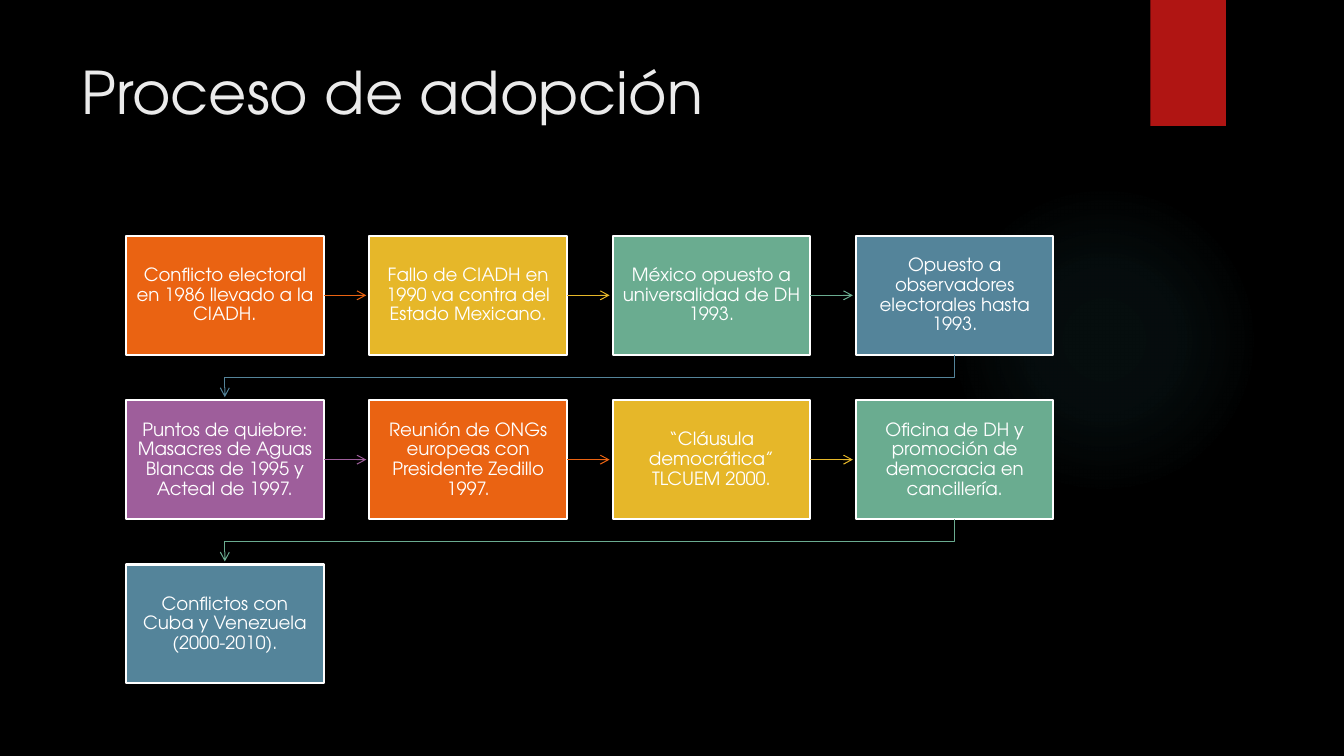
from dataclasses import dataclass
from itertools import pairwise

from lxml.etree import SubElement as Sub
from pptx import Presentation
from pptx.dml.color import RGBColor as Rgb
from pptx.enum.shapes import MSO_CONNECTOR as Link, MSO_SHAPE as Kind
from pptx.enum.text import MSO_ANCHOR as Anchor, PP_ALIGN as Align
from pptx.oxml import parse_xml
from pptx.oxml.ns import nsdecls, qn
from pptx.shapes.autoshape import Shape
from pptx.util import Inches, Pt

HUES = {
    "night": "000000", "snow": "FFFFFF", "pale": "EBEBEB", "red": "B01513",
    "glow": "50B9C1", "orange": "EA6312", "gold": "E6B729", "green": "6AAC90",
    "blue": "54849A", "plum": "9E5E9B",
}
FONT = "TeX Gyre Adventor"
COLS = 4
LEFT, TOP = 1.25, 2.34
STEP_X, STEP_Y = 2.413, 1.63
BOX_W, BOX_H = 1.96, 1.18
GAP = 0.03


@dataclass
class Step:
    text: str
    hue: str


STEPS = [
    Step("Conflicto electoral en 1986 llevado a la CIADH.", "orange"),
    Step("Fallo de CIADH en 1990 va contra del Estado Mexicano.", "gold"),
    Step("México opuesto a universalidad de DH 1993.", "green"),
    Step("Opuesto a observadores electorales hasta 1993.", "blue"),
    Step("Puntos de quiebre: Masacres de Aguas Blancas de 1995 y Acteal de 1997.", "plum"),
    Step("Reunión de ONGs europeas con Presidente Zedillo 1997.", "orange"),
    Step("“Cláusula democrática” TLCUEM 2000.", "gold"),
    Step("Oficina de DH y promoción de democracia en cancillería.", "green"),
    Step("Conflictos con Cuba y Venezuela (2000-2010).", "blue"),
]

deck = Presentation()
deck.slide_width, deck.slide_height = Inches(13.33), Inches(7.5)
slide = deck.slides.add_slide(deck.slide_layouts[6])
shapes = slide.shapes


def tint(name: str) -> Rgb:
    return Rgb.from_string(HUES[name])


def write(shape: Shape, text: str, *, size: float, hue: str, align: Align = Align.LEFT,
          anchor: Anchor = Anchor.TOP, pad: tuple[float, float] = (0.1, 0.05),
          lead: float = 1.0) -> None:
    frame = shape.text_frame
    frame.word_wrap = True
    frame.vertical_anchor = anchor
    frame.margin_left = frame.margin_right = Inches(pad[0])
    frame.margin_top = frame.margin_bottom = Inches(pad[1])
    para = frame.paragraphs[0]
    para.alignment, para.line_spacing = align, lead
    run = para.add_run()
    run.text = text
    run.font.name, run.font.size = FONT, Pt(size)
    run.font.color.rgb = tint(hue)


def block(kind: Kind, x: float, y: float, wide: float, high: float, hue: str) -> Shape:
    shape = shapes.add_shape(kind, Inches(x), Inches(y), Inches(wide), Inches(high))
    shape.shadow.inherit = False
    shape.fill.solid()
    shape.fill.fore_color.rgb = tint(hue)
    shape.line.fill.background()
    return shape


def glow() -> None:
    disc = block(Kind.OVAL, 9.41, 1.83, 3.08, 3.08, "glow")
    stops = "".join(
        f'<a:gs pos="{at * 1000}"><a:srgbClr val="{HUES["glow"]}">'
        f'<a:alpha val="{alpha * 1000}"/></a:srgbClr></a:gs>'
        for at, alpha in ((0, 7), (36, 6), (69, 0), (100, 0)))
    fill = parse_xml(
        f'<a:gradFill {nsdecls("a")}><a:gsLst>{stops}</a:gsLst><a:path path="circle">'
        '<a:fillToRect l="50000" t="50000" r="50000" b="50000"/></a:path></a:gradFill>')
    props = disc.element.spPr
    props.replace(props.find(qn("a:solidFill")), fill)


def place(index: int) -> tuple[float, float]:
    row, col = divmod(index, COLS)
    return LEFT + col * STEP_X, TOP + row * STEP_Y


def draw(index: int, step: Step) -> Shape:
    box = block(Kind.RECTANGLE, *place(index), BOX_W, BOX_H, step.hue)
    box.line.color.rgb, box.line.width = tint("snow"), Pt(1.5)
    write(box, step.text, size=13, hue="snow", align=Align.CENTER,
          anchor=Anchor.MIDDLE, pad=(0.1, 0.1), lead=0.9)
    return box


def join(first: Shape, last: Shape, hue: str) -> None:
    gap = Inches(GAP)
    if first.top == last.top:
        mid = first.top + first.height // 2
        arrow = shapes.add_connector(
            Link.STRAIGHT, first.left + first.width, mid, last.left - gap, mid)
        arrow.begin_connect(first, 3)
    else:
        start = first.left + first.width // 2
        end = last.left + last.width // 2
        base = first.top + first.height
        turn = (base + last.top) // 2
        pen = shapes.build_freeform(start, base)
        pen.add_line_segments([(start, turn), (end, turn), (end, last.top - gap)], close=False)
        arrow = pen.convert_to_shape()
        arrow.fill.background()
    arrow.line.color.rgb, arrow.line.width = tint(hue), Pt(0.75)
    Sub(arrow.line._get_or_add_ln(), qn("a:tailEnd"), type="arrow")
    Sub(arrow.element.spPr, qn("a:effectLst"))


def main() -> None:
    back = slide.background.fill
    back.solid()
    back.fore_color.rgb = tint("night")
    glow()
    block(Kind.RECTANGLE, 11.41, 0, 0.75, 1.25, "red")
    title = shapes.add_textbox(Inches(0.71), Inches(0.5), Inches(10.29), Inches(1.53))
    write(title, "Proceso de adopción", size=42, hue="pale")
    boxes = [draw(index, step) for index, step in enumerate(STEPS)]
    for (first, last), step in zip(pairwise(boxes), STEPS):
        join(first, last, step.hue)
    deck.save("out.pptx")


if __name__ == "__main__":
    main()
